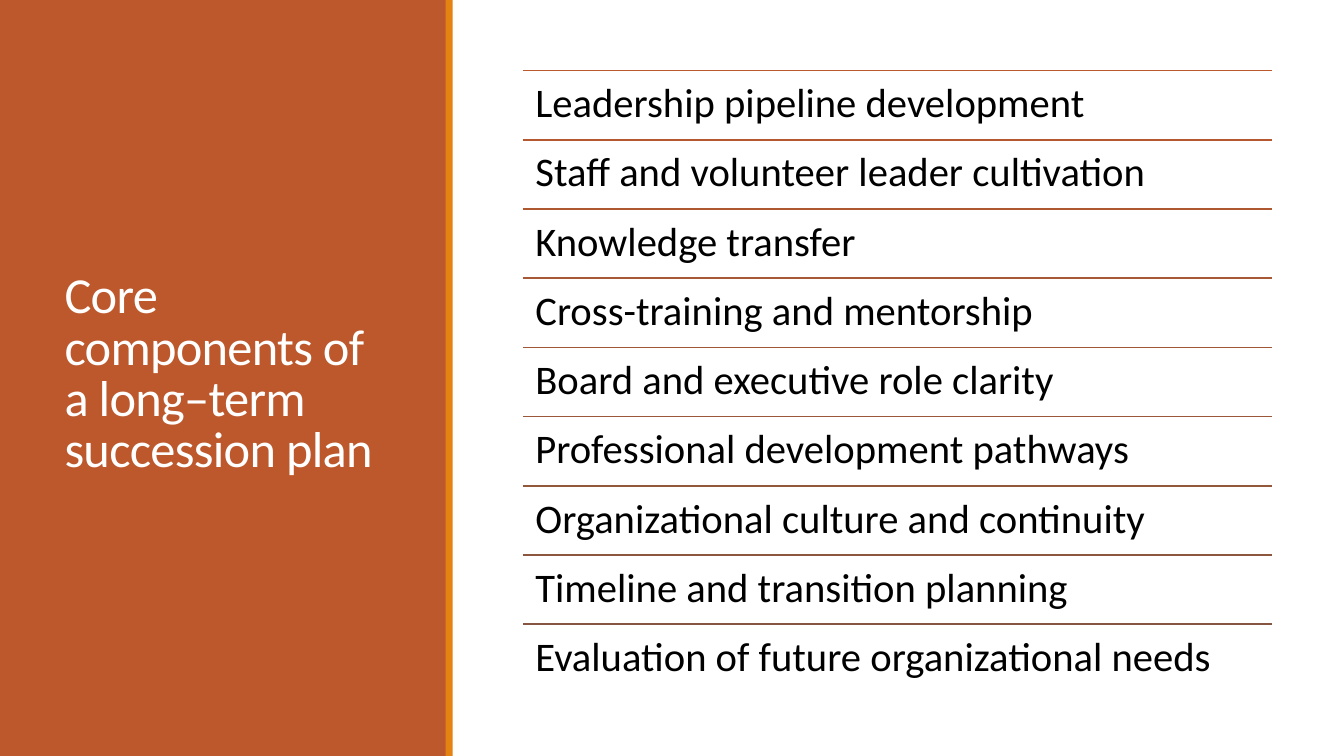
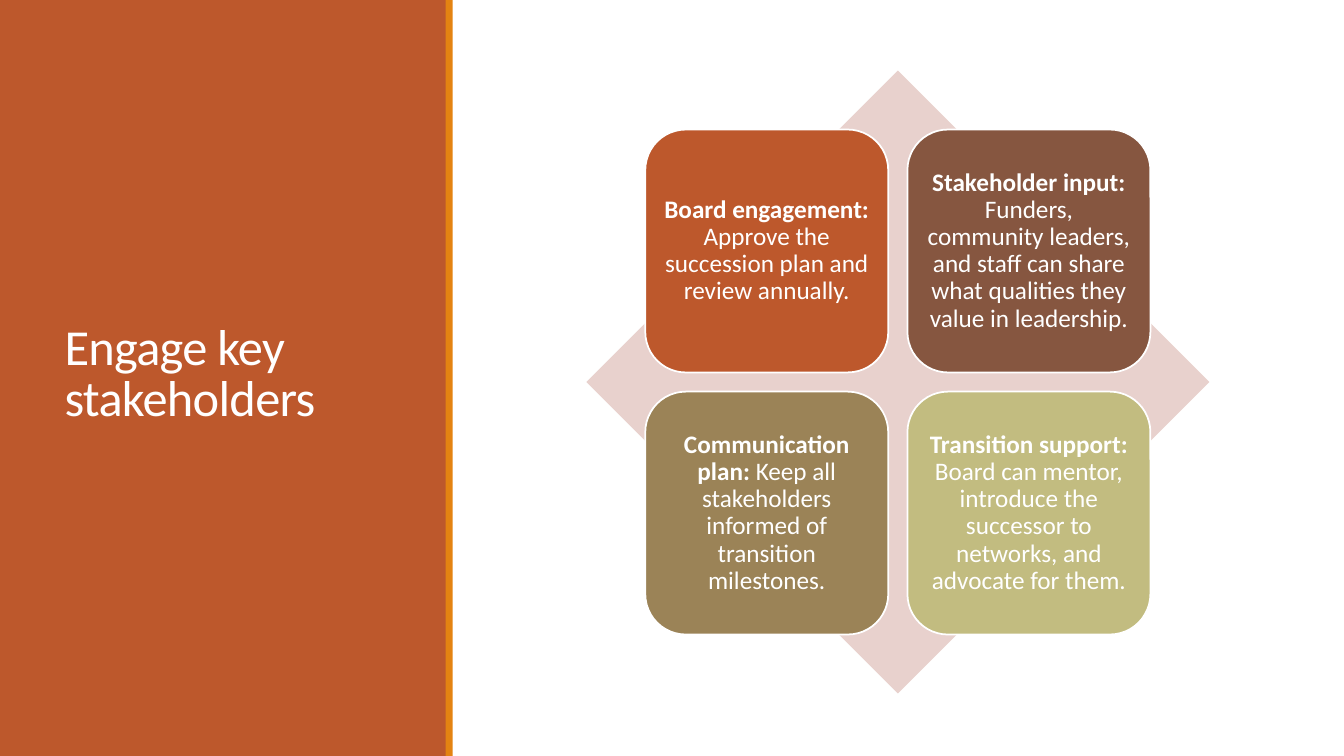
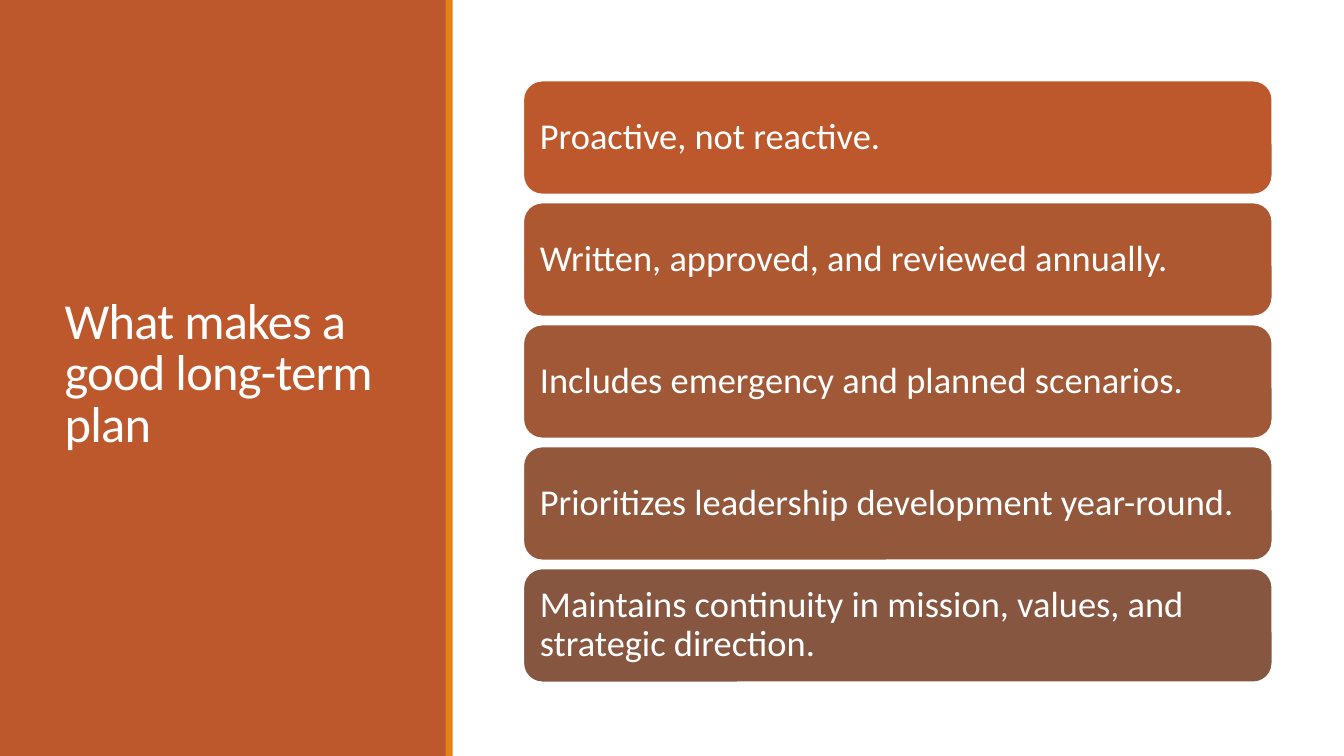
"""Build three succession-planning slides that share a coloured title panel."""
from lxml import etree
from pptx import Presentation
from pptx.dml.color import RGBColor
from pptx.enum.shapes import MSO_CONNECTOR, MSO_SHAPE
from pptx.enum.text import MSO_ANCHOR, MSO_AUTO_SIZE, PP_ALIGN
from pptx.oxml.ns import qn
from pptx.util import Inches, Pt

RECTANGLE, ROUNDED = MSO_SHAPE.RECTANGLE, MSO_SHAPE.ROUNDED_RECTANGLE
DIAMOND, STRAIGHT = MSO_SHAPE.DIAMOND, MSO_CONNECTOR.STRAIGHT
TOP, MIDDLE = MSO_ANCHOR.TOP, MSO_ANCHOR.MIDDLE
LEFT, CENTER = PP_ALIGN.LEFT, PP_ALIGN.CENTER
NO_AUTOFIT = MSO_AUTO_SIZE.NONE

WHITE = RGBColor(0xFF, 0xFF, 0xFF)
BLACK = RGBColor(0x00, 0x00, 0x00)
RUST = RGBColor(0xBD, 0x58, 0x2C)
ORANGE = RGBColor(0xE4, 0x83, 0x12)
BROWN = RGBColor(0x86, 0x56, 0x40)
KHAKI = RGBColor(0x9B, 0x83, 0x57)
SAGE = RGBColor(0xC2, 0xBC, 0x80)
BLUSH = RGBColor(0xE8, 0xD1, 0xCD)
RUST_TO_BROWN = (
    RUST,
    RGBColor(0xB6, 0x58, 0x2F),
    RGBColor(0xAE, 0x58, 0x32),
    RGBColor(0xA7, 0x58, 0x35),
    RGBColor(0xA0, 0x58, 0x37),
    RGBColor(0x9A, 0x57, 0x3A),
    RGBColor(0x93, 0x57, 0x3C),
    RGBColor(0x8C, 0x57, 0x3E),
    BROWN,
)

SLIDE_WIDTH, SLIDE_HEIGHT = 13.33, 7.5
CONTENT_LEFT, CONTENT_TOP = 5.19, 0.7
CONTENT_WIDTH, CONTENT_HEIGHT = 7.43, 6.18
OUTLINE_WIDTH = Pt(1.25)

TITLE_FONT = {"name": "Calibri", "size": Pt(36), "bold": False}
COMPONENT_FONT = {"name": "Calibri", "size": Pt(29)}
CARD_FONT = {"name": "Calibri", "size": Pt(18)}
QUALITY_FONT = {"name": "Calibri", "size": Pt(26)}

COMPONENTS = (
    "Leadership pipeline development",
    "Staff and volunteer leader cultivation",
    "Knowledge transfer",
    "Cross-training and mentorship",
    "Board and executive role clarity",
    "Professional development pathways",
    "Organizational culture and continuity",
    "Timeline and transition planning",
    "Evaluation of future organizational needs",
)
STAKEHOLDER_CARDS = (
    ("Board engagement:", " Approve the succession plan and review annually.", RUST),
    ("Stakeholder input:", " Funders, community leaders, and staff can share what "
     "qualities they value in leadership.", BROWN),
    ("Communication plan:", " Keep all stakeholders informed of transition milestones.",
     KHAKI),
    ("Transition support:", " Board can mentor, introduce the successor to networks, "
     "and advocate for them.", SAGE),
)
QUALITIES = (
    "Proactive, not reactive.",
    "Written, approved, and reviewed annually.",
    "Includes emergency and planned scenarios.",
    "Prioritizes leadership development year-round.",
    "Maintains continuity in mission, values, and strategic direction.",
)


def apply(target, values):
    """Set each named attribute on the target."""
    for name, value in values.items():
        setattr(target, name, value)


def box(left, top, width, height):
    """Return a position and size given in inches as lengths."""
    return [Inches(value) for value in (left, top, width, height)]


def write(shape, parts, font, color, inset, anchor=MIDDLE, align=LEFT, spacing=0.9):
    """Write one paragraph of (text, bold) parts into a shape."""
    frame = shape.text_frame
    margins = dict.fromkeys(
        ("margin_left", "margin_top", "margin_right", "margin_bottom"), Inches(inset))
    apply(frame, {"word_wrap": True, "auto_size": NO_AUTOFIT,
                  "vertical_anchor": anchor, **margins})
    paragraph = frame.paragraphs[0]
    apply(paragraph, {"alignment": align, "line_spacing": spacing})
    for text, bold in parts:
        run = paragraph.add_run()
        run.text = text
        apply(run.font, {**font, "bold": bold})
        run.font.color.rgb = color
    return paragraph


def add_filled(slide, preset, bounds, fill, outline=None):
    """Add a preset shape with a flat fill and an optional outline."""
    shape = slide.shapes.add_shape(preset, *box(*bounds))
    shape.shadow.inherit = False
    shape.fill.solid()
    shape.fill.fore_color.rgb = fill
    if outline is None:
        shape.line.fill.background()
    else:
        shape.line.color.rgb = outline
        shape.line.width = OUTLINE_WIDTH
    return shape


def add_rule(slide, top, color):
    """Add a horizontal line across the content area."""
    right = CONTENT_LEFT + CONTENT_WIDTH
    rule = slide.shapes.add_connector(STRAIGHT, *box(CONTENT_LEFT, top, right, top))
    rule.line.color.rgb = color
    rule.line.width = OUTLINE_WIDTH
    etree.SubElement(rule.element.spPr, qn("a:effectLst"))


def add_panel_slide(presentation, heading):
    """Add a slide with its heading on the coloured side panel."""
    slide = presentation.slides.add_slide(presentation.slide_layouts[5])
    title = slide.shapes.title
    for left, width, color in ((0, 4.43, RUST), (4.42, 0.07, ORANGE)):
        band = add_filled(slide, RECTANGLE, (left, 0, width, SLIDE_HEIGHT), color)
        title.element.addprevious(band.element)
    bounds = box(0.54, 0.57, 3.37, 6.31)
    apply(title, dict(zip(("left", "top", "width", "height"), bounds)))
    paragraph = write(title, [(heading, False)], TITLE_FONT, WHITE, 0.1, spacing=0.85)
    for run in paragraph.runs:
        run.font._element.set("spc", "-50")
    return slide


def add_components(slide):
    """Add the ruled list of plan components."""
    row_height = CONTENT_HEIGHT / len(COMPONENTS)
    for row, (component, color) in enumerate(zip(COMPONENTS, RUST_TO_BROWN)):
        top = CONTENT_TOP + row * row_height
        add_rule(slide, top, color)
        label = slide.shapes.add_textbox(
            *box(CONTENT_LEFT, top, CONTENT_WIDTH, row_height))
        write(label, [(component, False)], COMPONENT_FONT, BLACK, 0.12, anchor=TOP)


def add_stakeholder_matrix(slide):
    """Add four cards in a grid centred on a diamond."""
    side, gap = 2.41, 0.19
    center_x = CONTENT_LEFT + CONTENT_WIDTH / 2
    center_y = CONTENT_TOP + CONTENT_HEIGHT / 2
    add_filled(slide, DIAMOND, (center_x - CONTENT_HEIGHT / 2, CONTENT_TOP,
                                CONTENT_HEIGHT, CONTENT_HEIGHT), BLUSH)
    first_offset = side + gap / 2
    for index, (heading, detail, color) in enumerate(STAKEHOLDER_CARDS):
        row, column = divmod(index, 2)
        left = center_x - first_offset + column * (side + gap)
        top = center_y - first_offset + row * (side + gap)
        card = add_filled(slide, ROUNDED, (left, top, side, side), color, WHITE)
        write(card, [(heading, True), (detail, False)], CARD_FONT, WHITE, 0.07,
              align=CENTER)


def add_qualities(slide):
    """Add the stack of bars describing a good plan."""
    first_top, bar_height, pitch = 0.8, 1.13, 1.21
    for row, (quality, color) in enumerate(zip(QUALITIES, RUST_TO_BROWN[::2])):
        bounds = (CONTENT_LEFT, first_top + row * pitch, CONTENT_WIDTH, bar_height)
        bar = add_filled(slide, ROUNDED, bounds, color, WHITE)
        write(bar, [(quality, False)], QUALITY_FONT, WHITE, 0.11)


def main():
    """Build and save the presentation."""
    presentation = Presentation()
    presentation.slide_width = Inches(SLIDE_WIDTH)
    presentation.slide_height = Inches(SLIDE_HEIGHT)
    for heading, add_content in (
        ("Core components of a long–term succession plan", add_components),
        ("Engage key stakeholders", add_stakeholder_matrix),
        ("What makes a good long-term plan", add_qualities),
    ):
        add_content(add_panel_slide(presentation, heading))
    presentation.save("out.pptx")


if __name__ == "__main__":
    main()
